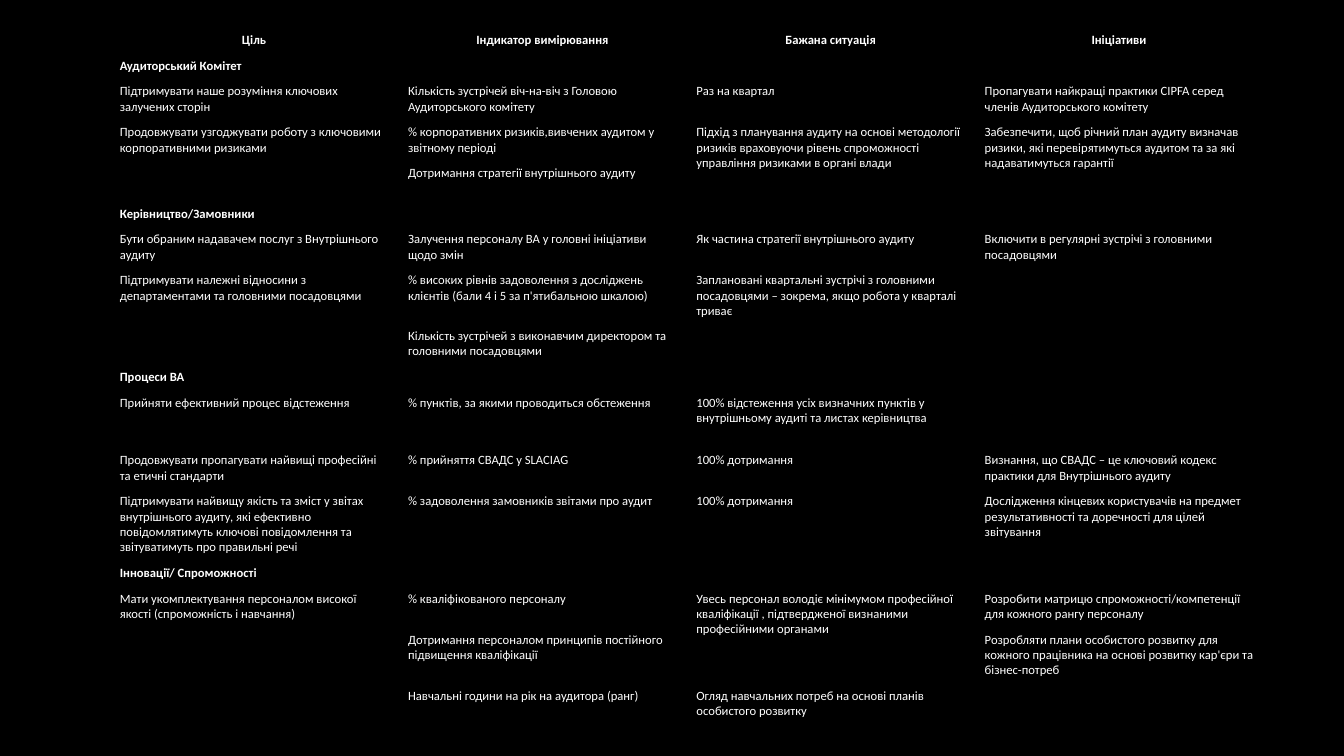
from lxml.etree import SubElement
from pptx import Presentation
from pptx.dml.color import RGBColor
from pptx.enum.text import PP_ALIGN
from pptx.oxml.ns import qn
from pptx.util import Cm, Pt

COLORS = {"back": "000000", "text": "FFFFFF", "line": "000000"}
FONT, SIZE = "Calibri", 9
UP = None  # the cell belongs to the one above

# Row heights in cm
LOW, MID, TALL, WIDE, HIGH = 0.64, 1.02, 1.4, 1.45, 1.78

HEADS = ["Ціль", "Індикатор вимірювання", "Бажана ситуація", "Ініціативи"]

# Each section: its title, then rows of a height and four cells
PARTS = [
    ("Аудиторський Комітет", [
        (MID, ["Підтримувати наше розуміння ключових залучених сторін",
               "Кількість зустрічей віч-на-віч з Головою Аудиторського комітету",
               "Раз на квартал",
               "Пропагувати найкращі практики CIPFA серед членів Аудиторського комітету"]),
        (MID, ["Продовжувати узгоджувати роботу з ключовими корпоративними ризиками",
               "% корпоративних ризиків,вивчених аудитом у звітному періоді",
               "Підхід з планування аудиту на основі методології ризиків враховуючи "
               "рівень спроможності управління ризиками в органі влади",
               "Забезпечити, щоб річний план аудиту визначав ризики, які "
               "перевірятимуться аудитом та за які надаватимуться гарантії"]),
        (MID, [UP, "Дотримання стратегії внутрішнього аудиту", UP, UP]),
    ]),
    ("Керівництво/Замовники", [
        (MID, ["Бути обраним надавачем послуг з Внутрішнього аудиту",
               "Залучення персоналу ВА у головні ініціативи щодо змін",
               "Як частина стратегії внутрішнього аудиту",
               "Включити в регулярні зустрічі з головними посадовцями"]),
        (TALL, ["Підтримувати належні відносини з департаментами та головними посадовцями",
                "% високих рівнів задоволення з досліджень клієнтів "
                "(бали 4 і 5 за п'ятибальною шкалою)",
                "Заплановані квартальні зустрічі з головними посадовцями – "
                "зокрема, якщо робота у кварталі триває",
                UP]),
        (MID, [UP, "Кількість зустрічей з виконавчим директором та головними посадовцями",
               UP, UP]),
    ]),
    ("Процеси ВА", [
        (WIDE, ["Прийняти ефективний процес відстеження",
                "% пунктів, за якими проводиться обстеження",
                "100% відстеження усіх визначних пунктів у внутрішньому аудиті "
                "та листах керівництва",
                ""]),
        (MID, ["Продовжувати пропагувати найвищі професійні та етичні стандарти",
               "% прийняття СВАДС у SLACIAG",
               "100% дотримання",
               "Визнання, що СВАДС – це ключовий кодекс практики для Внутрішнього аудиту"]),
        (HIGH, ["Підтримувати найвищу якість та зміст у звітах внутрішнього аудиту, які "
                "ефективно повідомлятимуть ключові повідомлення та звітуватимуть "
                "про правильні речі",
                "% задоволення замовників звітами про аудит",
                "100% дотримання",
                "Дослідження кінцевих користувачів на предмет результативності "
                "та доречності для цілей звітування"]),
    ]),
    ("Інновації/ Спроможності", [
        (MID, ["Мати укомплектування персоналом високої якості (спроможність і навчання)",
               "% кваліфікованого персоналу",
               "Увесь персонал володіє мінімумом професійної кваліфікації , "
               "підтвердженої визнаними професійними органами",
               "Розробити матрицю спроможності/компетенції для кожного рангу персоналу"]),
        (TALL, [UP, "Дотримання персоналом принципів постійного підвищення кваліфікації",
                UP,
                "Розробляти плани особистого розвитку для кожного працівника "
                "на основі розвитку кар'єри та бізнес-потреб"]),
        (WIDE, [UP, "Навчальні години на рік на аудитора (ранг)",
                "Огляд навчальних потреб на основі планів особистого розвитку",
                ""]),
    ]),
]


def color(name):
    return RGBColor.from_string(COLORS[name])


def style(cell):
    """Give a cell its borders, clear fill, margins and base text size."""
    props = cell._tc.get_or_add_tcPr()
    for side in ("a:lnL", "a:lnR", "a:lnT", "a:lnB"):
        line = SubElement(props, qn(side), w=str(Pt(1)))
        fill = SubElement(line, qn("a:solidFill"))
        SubElement(fill, qn("a:srgbClr"), val=COLORS["line"])
    cell.fill.background()
    cell.margin_left = cell.margin_right = Cm(0.25)
    cell.margin_top = cell.margin_bottom = Cm(0.13)
    # Empty cells need a small end mark to keep the row height
    end = cell.text_frame.paragraphs[0]._p.get_or_add_endParaRPr()
    end.set("sz", str(SIZE * 100))


def write(cell, text, bold=False, align=PP_ALIGN.LEFT):
    para = cell.text_frame.paragraphs[0]
    para.alignment = align
    run = para.add_run()
    run.text = text
    run.font.name, run.font.size, run.font.bold = FONT, Pt(SIZE), bold
    run.font.color.rgb = color("text")


def add_goals(slide, left, top, width):
    """Place the table of goals in a box of the given width."""
    # Lay the sections out as one list of rows
    rows = [(LOW, HEADS, "head")]
    for title, lines in PARTS:
        rows.append((LOW, [title, "", "", ""], "part"))
        rows += [(high, texts, "body") for high, texts in lines]
    count, cols = len(rows), len(HEADS)

    total = sum(high for high, _, _ in rows)
    table = slide.shapes.add_table(
        count, cols, Cm(left), Cm(top), Cm(width), Cm(total)).table
    table.first_row = table.horz_banding = False
    for col in table.columns:
        col.width = Cm(width / cols)

    for r, (high, texts, kind) in enumerate(rows):
        table.rows[r].height = Cm(high)
        for c, text in enumerate(texts):
            cell = table.cell(r, c)
            style(cell)
            # Merge with the cells below that belong to this one
            last = r
            while text is not UP and last + 1 < count and rows[last + 1][1][c] is UP:
                last += 1
            if last > r:
                cell.merge(table.cell(last, c))
            if text:
                align = PP_ALIGN.CENTER if kind == "head" else PP_ALIGN.LEFT
                write(cell, text, kind != "body", align)
        if kind == "part":
            table.cell(r, 0).merge(table.cell(r, cols - 1))


def main():
    deck = Presentation()
    deck.slide_width, deck.slide_height = Cm(33.87), Cm(19.05)
    slide = deck.slides.add_slide(deck.slide_layouts[6])
    slide.background.fill.solid()
    slide.background.fill.fore_color.rgb = color("back")
    add_goals(slide, 2.77, 0.69, 29.06)
    deck.save("out.pptx")


if __name__ == "__main__":
    main()
